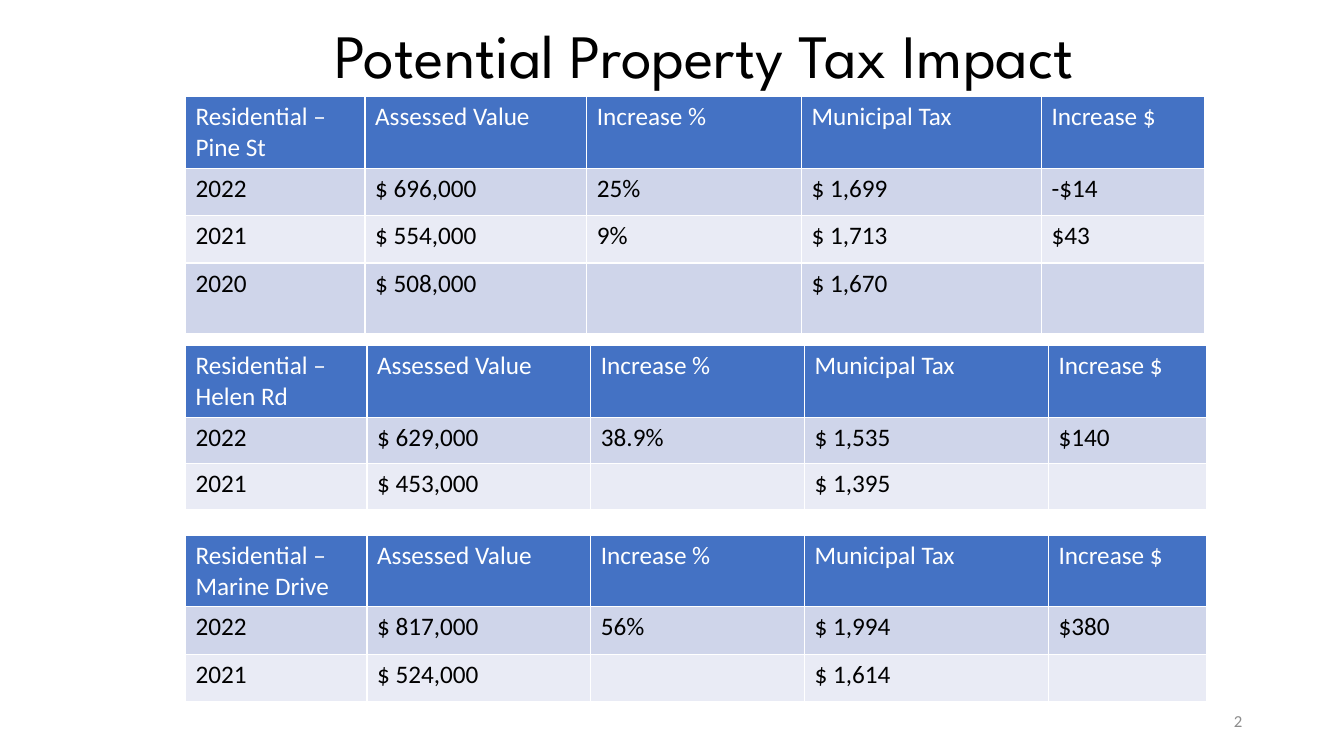
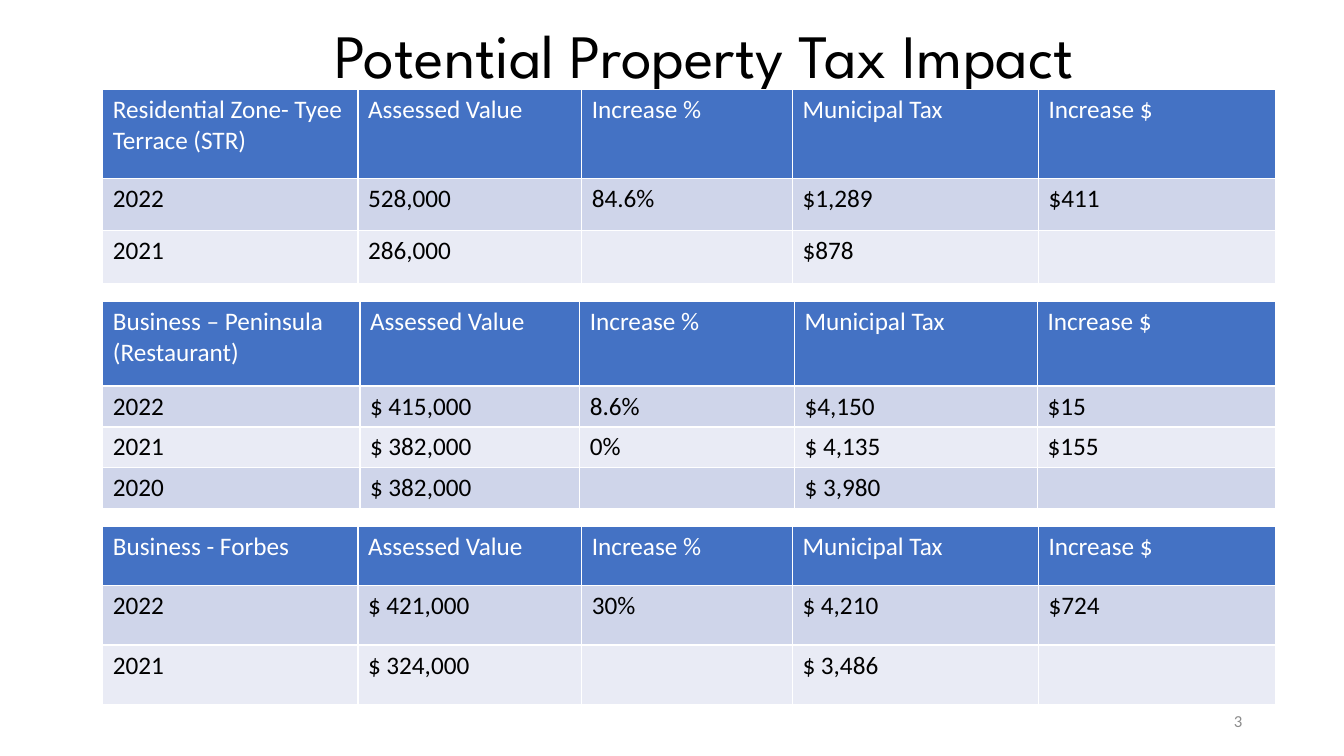
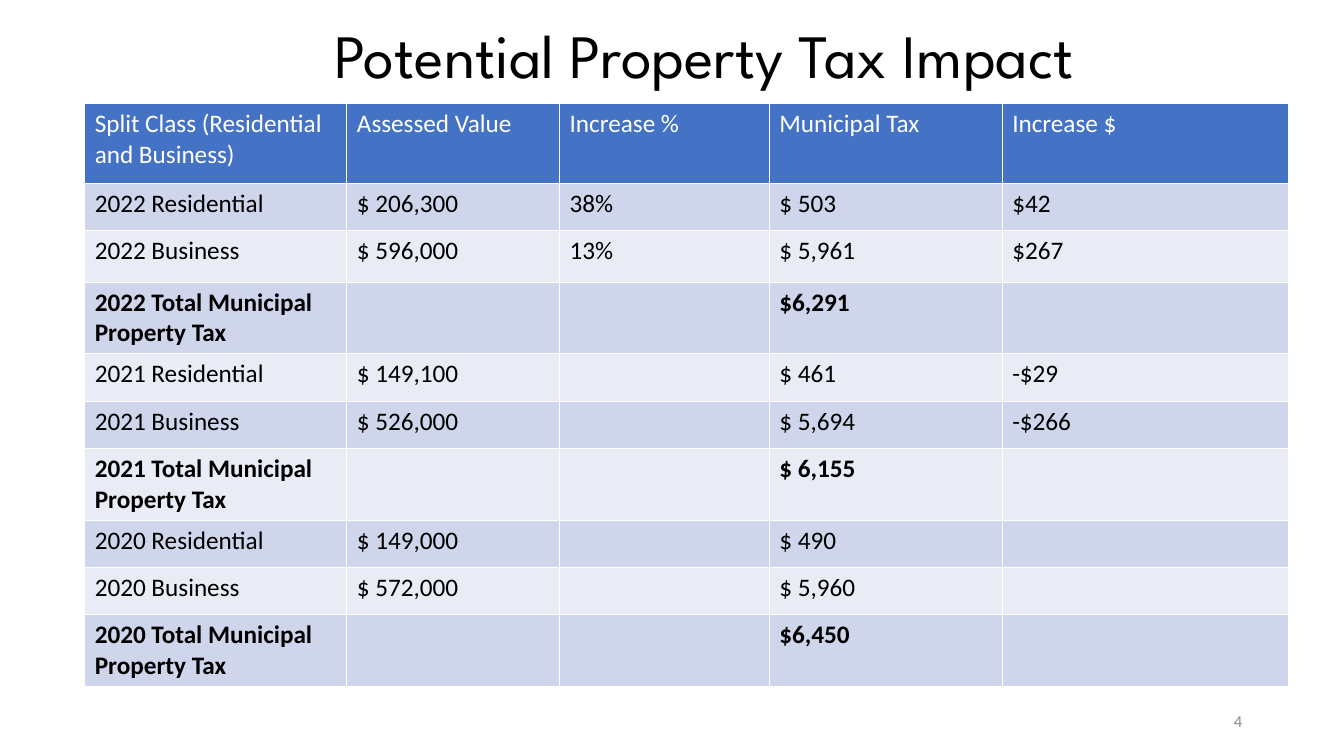
from dataclasses import dataclass

from pptx import Presentation
from pptx.dml.color import RGBColor
from pptx.enum.text import MSO_ANCHOR, MSO_AUTO_SIZE, PP_ALIGN
from pptx.util import Emu, Pt


@dataclass(frozen=True)
class Theme:
    head: str = "4472C4"
    bands: tuple = ("CFD5EA", "E9EBF5")
    light: str = "FFFFFF"
    dark: str = "000000"
    faint: str = "8C8C8C"
    display: str = "League Spartan"
    body: str = "Calibri"
    title: int = 44
    text: int = 18
    small: int = 12


THEME = Theme()
SCALE = 9144  # EMU in one px, at 100 px to the inch
SIZE = (1333, 750)
TITLE = "Potential Property Tax Impact"
FIELDS = ["Assessed Value", "Increase %", "Municipal Tax", "Increase $"]

PINE = [
    ["2022", "$ 696,000", "25%", "$ 1,699", "-$14"],
    ["2021", "$ 554,000", "9%", "$ 1,713", "$43"],
    ["2020", "$ 508,000", "", "$ 1,670", ""],
]
HELEN = [
    ["2022", "$ 629,000", "38.9%", "$ 1,535", "$140"],
    ["2021", "$ 453,000", "", "$ 1,395", ""],
]
MARINE = [
    ["2022", "$ 817,000", "56%", "$ 1,994", "$380"],
    ["2021", "$ 524,000", "", "$ 1,614", ""],
]
TYEE = [
    ["2022", "528,000", "84.6%", "$1,289", "$411"],
    ["2021", "286,000", "", "$878", ""],
]
DINER = [
    ["2022", "$ 415,000", "8.6%", "$4,150", "$15"],
    ["2021", "$ 382,000", "0%", "$ 4,135", "$155"],
    ["2020", "$ 382,000", "", "$ 3,980", ""],
]
FORBES = [
    ["2022", "$ 421,000", "30%", "$ 4,210", "$724"],
    ["2021", "$ 324,000", "", "$ 3,486", ""],
]
SPLIT = [
    ["2022 Residential", "$ 206,300", "38%", "$ 503", "$42"],
    ["2022 Business", "$ 596,000", "13%", "$ 5,961", "$267"],
    ["2022 Total Municipal Property Tax", "", "", "$6,291", ""],
    ["2021 Residential", "$ 149,100", "", "$ 461", "-$29"],
    ["2021 Business", "$ 526,000", "", "$ 5,694", "-$266"],
    ["2021 Total Municipal Property Tax", "", "", "$ 6,155", ""],
    ["2020 Residential", "$ 149,000", "", "$ 490", ""],
    ["2020 Business", "$ 572,000", "", "$ 5,960", ""],
    ["2020 Total Municipal Property Tax", "", "", "$6,450", ""],
]

HOMES = [180, 222, 212, 242, 157]
ZONES = [253, 222, 209, 244, 235]
# Each table: name, left, top, column widths, row heights, data
PAGES = [
    [
        ("Residential – Pine St", 184, 96, [178, 220, 213, 238, 162],
         [71, 47, 47, 70], PINE),
        ("Residential – Helen Rd", 184, 343, HOMES, [71, 46, 46], HELEN),
        ("Residential – Marine Drive", 184, 531, HOMES, [71, 47, 47], MARINE),
    ],
    [
        ("Residential Zone- Tyee Terrace (STR)", 102, 89, ZONES,
         [88, 52, 52], TYEE),
        ("Business – Peninsula (Restaurant)", 102, 299,
         [255, 218, 213, 241, 236], [84, 40, 40, 40], DINER),
        ("Business - Forbes", 102, 522, ZONES, [59, 59, 59], FORBES),
    ],
    [
        ("Split Class (Residential and Business)", 84, 103,
         [260, 211, 208, 231, 284],
         [79, 47, 51, 71, 47, 47, 71, 47, 47, 71], SPLIT),
    ],
]


def px(count):
    return Emu(count * SCALE)


def apply(target, values):
    for name, value in values.items():
        setattr(target, name, value)


def write(frame, text, font, size, color, bold=False, **layout):
    """Set the first paragraph of a frame; layout holds paragraph values."""
    line = frame.paragraphs[0]
    line.text = text
    apply(line, layout)
    apply(line.font, {"name": font, "size": Pt(size), "bold": bold})
    line.font.color.rgb = RGBColor.from_string(color)


def place(shape, left, top, width, height):
    apply(shape, {"left": px(left), "top": px(top),
                  "width": px(width), "height": px(height)})
    apply(shape.text_frame, {"word_wrap": True,
                             "auto_size": MSO_AUTO_SIZE.NONE,
                             "vertical_anchor": MSO_ANCHOR.MIDDLE})


def add_page(deck, number):
    """Add a slide with the shared title and its page number."""
    slide = deck.slides.add_slide(deck.slide_layouts[5])
    title = slide.shapes.title
    place(title, 249, 10, 900, 97)
    write(title.text_frame, TITLE, THEME.display, THEME.title, THEME.dark,
          alignment=PP_ALIGN.CENTER, line_spacing=0.9)
    foot = slide.shapes.add_textbox(0, 0, 0, 0)
    place(foot, 942, 695, 300, 40)
    write(foot.text_frame, str(number), THEME.body, THEME.small, THEME.faint,
          alignment=PP_ALIGN.RIGHT)
    return slide


def add_grid(slide, name, left, top, cols, rows, data):
    """Add a table with a header row, banded rows and bold totals."""
    table = slide.shapes.add_table(
        len(rows), len(cols), px(left), px(top),
        px(sum(cols)), px(sum(rows))).table
    for col, width in zip(table.columns, cols):
        col.width = px(width)
    for index, texts in enumerate([[name, *FIELDS], *data]):
        table.rows[index].height = px(rows[index])
        fill = THEME.bands[(index - 1) % 2] if index else THEME.head
        color = THEME.dark if index else THEME.light
        bold = "Total" in texts[0]
        for cell, text in zip(table.rows[index].cells, texts):
            cell.fill.solid()
            cell.fill.fore_color.rgb = RGBColor.from_string(fill)
            write(cell.text_frame, text, THEME.body, THEME.text, color, bold)


def main():
    deck = Presentation()
    apply(deck, {"slide_width": px(SIZE[0]), "slide_height": px(SIZE[1])})
    for number, grids in enumerate(PAGES, start=2):
        slide = add_page(deck, number)
        for grid in grids:
            add_grid(slide, *grid)
    deck.save("out.pptx")


if __name__ == "__main__":
    main()
